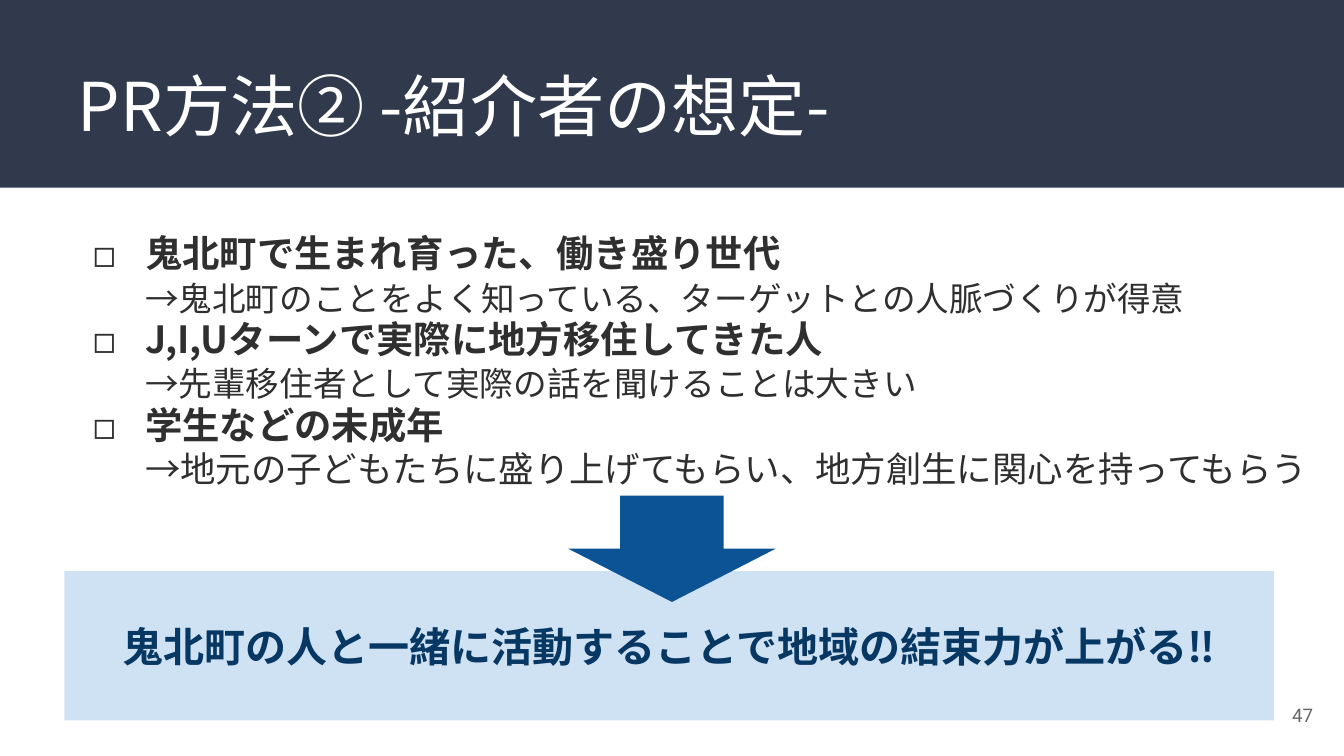
import pptx
import pptx.util
import pptx.dml.color
import pptx.enum.shapes
import pptx.enum.text
import pptx.oxml.ns
from lxml import etree

Pt = pptx.util.Pt
RGBColor = pptx.dml.color.RGBColor
MSO_SHAPE = pptx.enum.shapes.MSO_SHAPE
ALIGN = pptx.enum.text.PP_ALIGN
ANCHOR = pptx.enum.text.MSO_ANCHOR
qn = pptx.oxml.ns.qn

NAVY = RGBColor(0x31, 0x39, 0x4D)
WHITE = RGBColor(0xFF, 0xFF, 0xFF)
INK = RGBColor(0x2F, 0x2F, 0x2F)
GRAY = RGBColor(0x66, 0x66, 0x66)
PALE_BLUE = RGBColor(0xCF, 0xE2, 0xF3)
ARROW_BLUE = RGBColor(0x0B, 0x53, 0x94)
DEEP_BLUE = RGBColor(0x07, 0x37, 0x63)

JAPANESE = "Noto Sans CJK JP"
LATIN = "Roboto"
INSET = Pt(7.2)

# Each introducer: who, why, and the size of the reason
INTRODUCERS = [
    ("鬼北町で生まれ育った、働き盛り世代",
     "→鬼北町のことをよく知っている、ターゲットとの人脈づくりが得意", 18),
    ("J,I,Uターンで実際に地方移住してきた人",
     "→先輩移住者として実際の話を聞けることは大きい", 18),
    ("学生などの未成年",
     "→地元の子どもたちに盛り上げてもらい、地方創生に関心を持ってもらう", 19),
]


def add_run(paragraph, text, size, color, bold=False, font=JAPANESE):
    run = paragraph.add_run()
    run.text = text
    run.font.size = Pt(size)
    run.font.bold = bold
    run.font.color.rgb = color
    run.font.name = font
    # East Asian characters need their own typeface entry
    east_asian = etree.SubElement(run.font._element, qn("a:ea"))
    east_asian.set("typeface", font)


def prepare_frame(holder, anchor):
    frame = holder.text_frame
    frame.word_wrap = True
    frame.auto_size = pptx.enum.text.MSO_AUTO_SIZE.NONE
    frame.vertical_anchor = anchor
    frame.margin_left = frame.margin_right = INSET
    frame.margin_top = frame.margin_bottom = INSET
    return frame


def place(holder, box):
    holder.left, holder.top, holder.width, holder.height = map(Pt, box)


def add_block(slide, kind, box, fill):
    block = slide.shapes.add_shape(kind, *map(Pt, box))
    block.shadow.inherit = False
    block.fill.solid()
    block.fill.fore_color.rgb = fill
    block.line.fill.background()
    return block


def add_bullet(paragraph, char, color):
    properties = paragraph._p.get_or_add_pPr()
    properties.set("marL", str(Pt(36)))
    properties.set("indent", str(-Pt(28)))
    bullet_color = etree.SubElement(properties, qn("a:buClr"))
    etree.SubElement(bullet_color, qn("a:srgbClr")).set("val", str(color))
    etree.SubElement(properties, qn("a:buFont")).set("typeface", JAPANESE)
    etree.SubElement(properties, qn("a:buChar")).set("char", char)


def build_header(slide, box):
    left, top, width, height = box
    band = add_block(slide, MSO_SHAPE.RECTANGLE, box, NAVY)
    slide.shapes._spTree.insert(2, band._element)  # behind the title
    title = slide.shapes.title
    place(title, (left + 34.5, top + 27.5, width - 59, height - 31))
    heading = prepare_frame(title, ANCHOR.TOP).paragraphs[0]
    heading.alignment = ALIGN.LEFT
    add_run(heading, "PR方法② -紹介者の想定-", 36, WHITE)


def build_introducers(slide, box):
    body = slide.placeholders[1]
    place(body, box)
    frame = prepare_frame(body, ANCHOR.MIDDLE)
    for number, (who, reason, reason_size) in enumerate(INTRODUCERS):
        entry = frame.add_paragraph() if number else frame.paragraphs[0]
        add_bullet(entry, "◻", INK)
        entry.alignment = ALIGN.LEFT
        entry.line_spacing = Pt(23)
        entry.space_before = entry.space_after = Pt(0)
        add_run(entry, who, 20, INK, bold=True)
        entry.add_line_break()
        add_run(entry, reason, reason_size, INK)


def build_conclusion(slide, box):
    left, top, width, height = box
    panel = add_block(slide, MSO_SHAPE.RECTANGLE, box, PALE_BLUE)
    message = prepare_frame(panel, ANCHOR.MIDDLE).paragraphs[0]
    message.alignment = ALIGN.CENTER
    add_run(message, "鬼北町の人と一緒に活動することで地域の結束力が上がる‼",
            22, DEEP_BLUE, bold=True)
    # Arrow leading into the panel
    add_block(slide, MSO_SHAPE.DOWN_ARROW,
              (left + 270, top - 40.5, 111, 57), ARROW_BLUE)


def build_page_number(slide, box):
    page_number = slide.shapes.add_textbox(*map(Pt, box))
    line = prepare_frame(page_number, ANCHOR.MIDDLE).paragraphs[0]
    line.alignment = ALIGN.RIGHT
    add_run(line, "47", 10, GRAY, font=LATIN)


def main():
    deck = pptx.Presentation()
    deck.slide_width, deck.slide_height = Pt(720), Pt(405)
    slide = deck.slides.add_slide(deck.slide_layouts[1])
    build_header(slide, (0, 0, 720, 100.5))
    build_introducers(slide, (34.5, 114.5, 685.5, 157.5))
    build_page_number(slide, (667.5, 367.5, 43, 31))
    build_conclusion(slide, (34.5, 306, 648, 80))
    deck.save("out.pptx")


if __name__ == "__main__":
    main()
